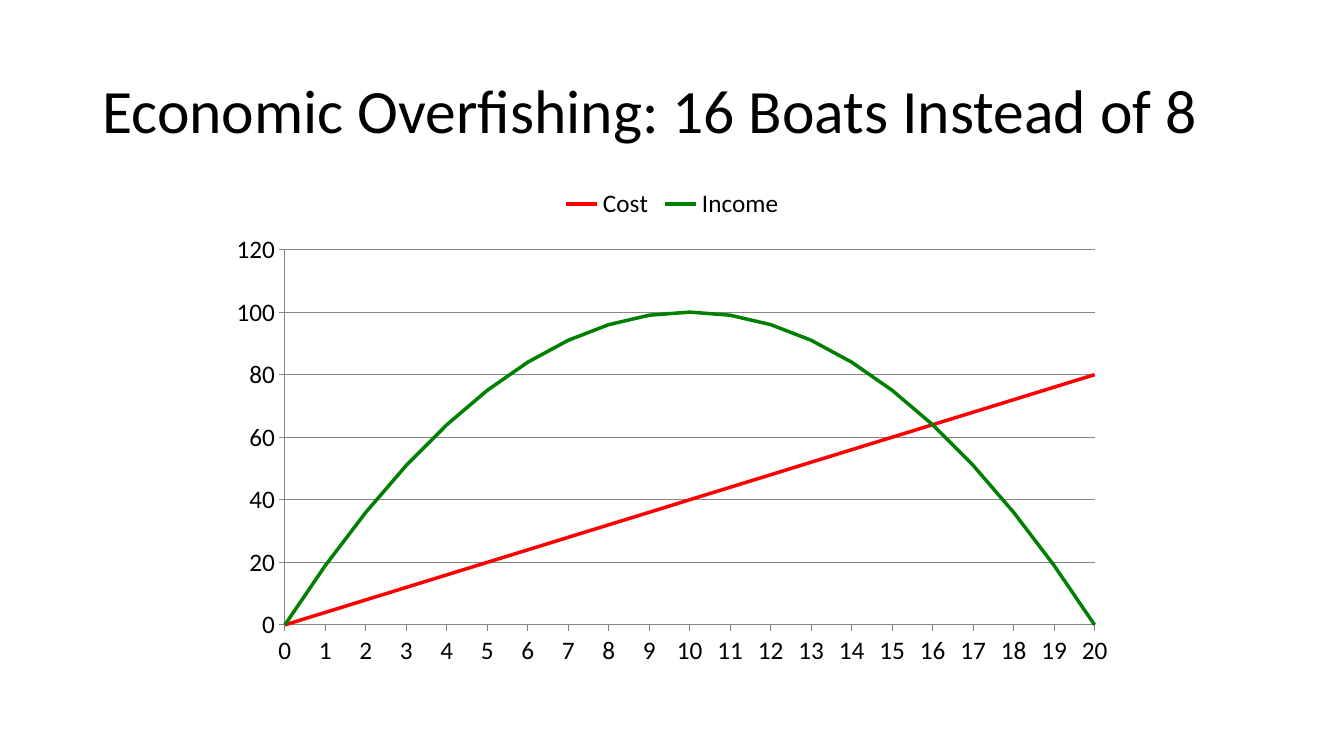
import pptx
import pptx.chart.data
import pptx.dml.color
import pptx.enum.chart
import pptx.enum.text
import pptx.oxml
import pptx.util

COLUMNS, ROWS = 160, 90
BOATS = range(21)
COST_PER_BOAT = 4


def colour(value):
    return pptx.dml.color.RGBColor.from_string(value)


class SlideBuilder:
    """Holds the style and the current page; places are in grid columns and rows."""

    font_name = "Calibri"
    ink = "000000"
    rule = "868686"

    def __init__(self, deck):
        self.column = deck.slide_width / COLUMNS
        self.row = deck.slide_height / ROWS
        self.page = deck.slides.add_slide(deck.slide_layouts[6])
        self.page.background.fill.solid()
        self.page.background.fill.fore_color.rgb = colour("FFFFFF")

    def place(self, left, top, width, height):
        """Turn grid units into slide lengths."""
        return (round(left * self.column), round(top * self.row),
                round(width * self.column), round(height * self.row))

    def style_font(self, font, size):
        font.name = self.font_name
        font.size = pptx.util.Pt(size)
        font.color.rgb = colour(self.ink)

    def style_line(self, line, value, width):
        line.color.rgb = colour(value)
        line.width = pptx.util.Pt(width)

    def title(self, text, place, size):
        box = self.page.shapes.add_textbox(*self.place(*place))
        frame = box.text_frame
        frame.word_wrap = True
        frame.vertical_anchor = pptx.enum.text.MSO_ANCHOR.MIDDLE
        frame.text = text
        para = frame.paragraphs[0]
        para.line_spacing = 0.9
        self.style_font(para.runs[0].font, size)

    def line_chart(self, categories, series, place, size):
        """Draw a line chart from (name, values, colour) rows."""
        data = pptx.chart.data.CategoryChartData()
        data.categories = categories
        for name, values, _ in series:
            data.add_series(name, values)
        chart = self.page.shapes.add_chart(
            pptx.enum.chart.XL_CHART_TYPE.LINE, *self.place(*place), data).chart
        self.style_font(chart.font, size)
        chart.has_title = False
        chart.has_legend = True
        chart.legend.position = pptx.enum.chart.XL_LEGEND_POSITION.TOP
        chart.legend.include_in_layout = False
        chart.plots[0].vary_by_categories = False
        for curve, (_, _, value) in zip(chart.plots[0].series, series):
            curve.smooth = False
            curve.marker.style = pptx.enum.chart.XL_MARKER_STYLE.NONE
            self.style_line(curve.format.line, value, 2.5)
        self.style_axes(chart)

    def style_axes(self, chart):
        for axis in (chart.category_axis, chart.value_axis):
            axis.major_tick_mark = pptx.enum.chart.XL_TICK_MARK.OUTSIDE
            axis.minor_tick_mark = pptx.enum.chart.XL_TICK_MARK.NONE
            self.style_line(axis.format.line, self.rule, 0.75)
        scale = chart.value_axis
        scale.minimum_scale, scale.maximum_scale, scale.major_unit = 0, 120, 20
        scale.has_major_gridlines = True
        self.style_line(scale.major_gridlines.format.line, self.rule, 0.75)
        # The curves start on the value axis rather than half a category away.
        crossing = chart.element.find(".//" + pptx.oxml.ns.qn("c:crossBetween"))
        if crossing is None:
            crossing = pptx.oxml.parse_xml(
                f'<c:crossBetween {pptx.oxml.ns.nsdecls("c")} val="midCat"/>')
            unit = chart.element.find(".//" + pptx.oxml.ns.qn("c:majorUnit"))
            unit.addprevious(crossing)
        crossing.set("val", "midCat")


def main():
    deck = pptx.Presentation()
    deck.slide_width = pptx.util.Inches(13.33)
    deck.slide_height = pptx.util.Inches(7.5)
    builder = SlideBuilder(deck)
    builder.title("Economic Overfishing: 16 Boats Instead of 8",
                  (11, 4.8, 138, 17.4), 44)
    cost = [COST_PER_BOAT * boats for boats in BOATS]
    income = [boats * (20 - boats) for boats in BOATS]
    builder.line_chart([str(boats) for boats in BOATS],
                       [("Cost", cost, "FF0000"), ("Income", income, "008000")],
                       (26, 21, 108, 59.4), 18)
    deck.save("out.pptx")


if __name__ == "__main__":
    main()
